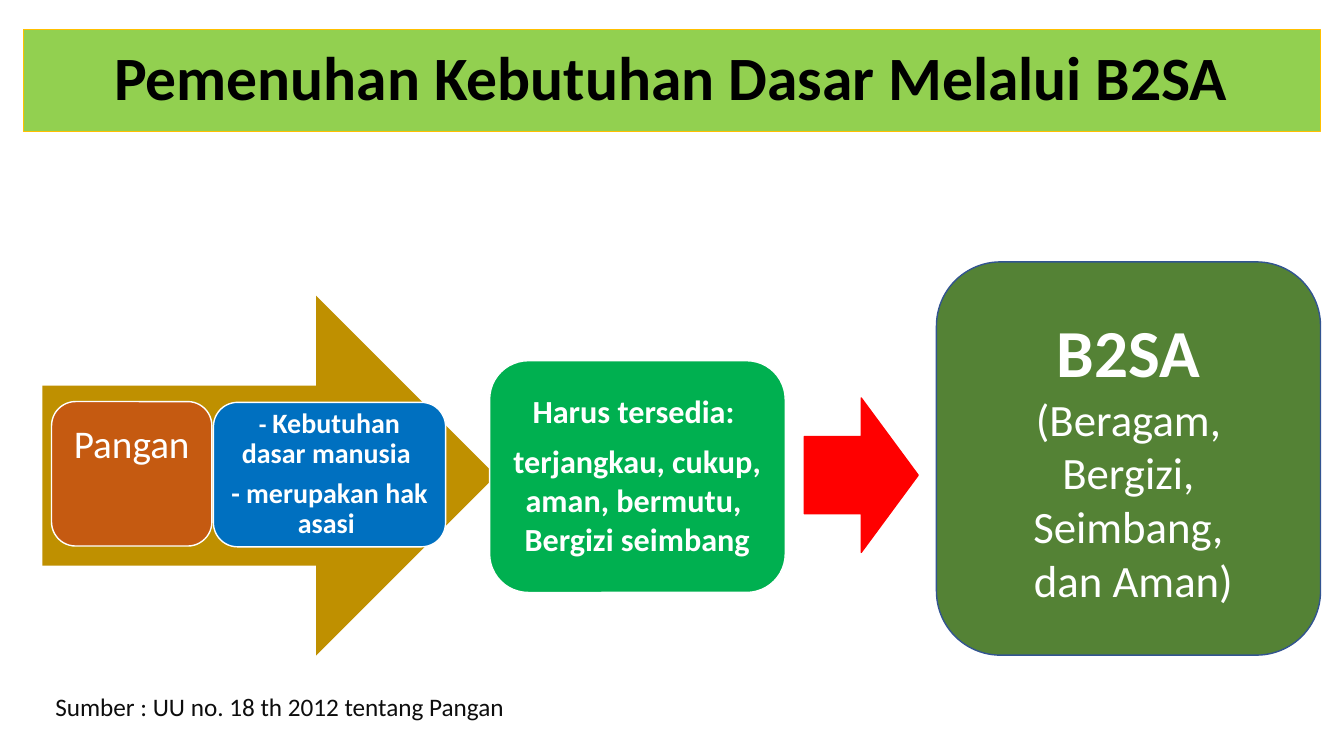
from pptx import Presentation
from pptx.dml.color import RGBColor
from pptx.enum.shapes import MSO_SHAPE
from pptx.enum.text import MSO_ANCHOR, PP_ALIGN
from pptx.util import Cm, Pt

ARROW = MSO_SHAPE.RIGHT_ARROW
ROUNDED = MSO_SHAPE.ROUNDED_RECTANGLE
MIDDLE = MSO_ANCHOR.MIDDLE
CENTER = PP_ALIGN.CENTER

THEME = {
    "font": "Calibri",
    "colors": {
        "black": "000000", "ink": "0D0D0D", "white": "FFFFFF",
        "lime": "92D050", "amber": "FFC000", "gold": "BF9000",
        "rust": "C55A11", "blue": "0070C0", "green": "00B050",
        "olive": "548235", "navy": "325491", "red": "FF0000",
    },
    "sizes": {"title": 44, "goal": 48, "goal_detail": 32, "food": 28,
              "supply": 23, "need": 20, "dash": 18, "source": 18},
}


def color(name):
    return RGBColor.from_string(THEME["colors"][name])


def write(frame, paragraphs, ink="white"):
    """Fill a frame with paragraphs of (text, size, bold, line spacing, space after)."""
    frame.text = "\n".join(entry[0] for entry in paragraphs)
    frame.vertical_anchor = MIDDLE
    for paragraph, (_, size, bold, spacing, after) in zip(frame.paragraphs, paragraphs):
        paragraph.alignment = CENTER
        paragraph.line_spacing = spacing
        paragraph.space_before = Pt(0)
        paragraph.space_after = Pt(after)
        for run in paragraph.runs:
            run.font.name = THEME["font"]
            run.font.size = Pt(THEME["sizes"][size])
            run.font.bold = bold
            run.font.color.rgb = color(ink)


prs = Presentation()
prs.slide_width, prs.slide_height = Cm(33.87), Cm(19.05)
slide = prs.slides.add_slide(prs.slide_layouts[5])

# Title band
title = slide.shapes.title
title.left, title.top, title.width, title.height = Cm(0.58), Cm(0.74), Cm(32.69), Cm(2.57)
title.fill.solid()
title.fill.fore_color.rgb = color("lime")
title.line.color.rgb = color("amber")
title.line.width = Pt(0.5)
write(title.text_frame,
      [("Pemenuhan Kebutuhan Dasar Melalui B2SA", "title", True, 0.9, 0)], "black")

# Flow from food to B2SA, back to front:
# preset, (left, top, width, height), fill, line, (side margin, bottom margin), paragraphs
steps = [
    (ARROW, (1.07, 7.45, 11.43, 9.07), "gold", None, (0.25, 0.13), []),
    (ROUNDED, (1.3, 10.12, 4.04, 3.64), "rust", "white", (0.3, 1.7),
     [("Pangan", "food", False, 0.9, 0)]),
    (ROUNDED, (5.38, 10.14, 5.85, 3.64), "blue", "white", (0.18, 0.18),
     [("- Kebutuhan dasar manusia ", "need", True, 0.9, 7),
      ("- merupakan hak asasi ", "need", True, 0.9, 7)]),
    (ROUNDED, (12.34, 9.09, 7.45, 5.84), "green", "white", (0.25, 0.25),
     [("Harus tersedia: ", "supply", True, 0.9, 8),
      ("terjangkau, cukup, aman, bermutu, ", "supply", True, 1.0, 0),
      ("Bergizi seimbang", "supply", True, 1.0, 0)]),
    (ROUNDED, (23.6, 6.6, 9.68, 9.91), "olive", "navy", (0.25, 0.13),
     [("B2SA", "goal", True, 1.0, 0),
      ("(Beragam, Bergizi, Seimbang,", "goal_detail", False, 1.0, 0),
      (" dan Aman)", "goal_detail", False, 1.0, 0)]),
    (ARROW, (20.27, 10.03, 2.87, 3.89), "red", "red", (0.25, 0.13), []),
]
for preset, place, fill, line, (side, bottom), paragraphs in steps:
    step = slide.shapes.add_shape(preset, *(Cm(length) for length in place))
    step.shadow.inherit = False
    step.fill.solid()
    step.fill.fore_color.rgb = color(fill)
    if line:
        step.line.color.rgb = color(line)
        step.line.width = Pt(1)
    else:
        step.line.fill.background()
    if paragraphs:
        frame = step.text_frame
        frame.word_wrap = True
        frame.margin_left = frame.margin_right = Cm(side)
        frame.margin_top = Cm(min(side, bottom))
        frame.margin_bottom = Cm(bottom)
        write(frame, paragraphs)
        # The opening dash is smaller than the words after it
        if fill == "blue":
            first = frame.paragraphs[0]
            dash = first.runs[0]
            words = first.add_run()
            dash.text, words.text = "- ", dash.text[2:]
            words.font.name = THEME["font"]
            words.font.size = dash.font.size
            words.font.bold = True
            words.font.color.rgb = color("white")
            dash.font.size = Pt(THEME["sizes"]["dash"])

# Source line
source = slide.shapes.add_textbox(Cm(1.07), Cm(17.3), Cm(11.96), Cm(1.02))
write(source.text_frame,
      [("Sumber : UU no. 18 th 2012 tentang Pangan", "source", False, 1.0, 0)], "ink")

prs.save("out.pptx")
